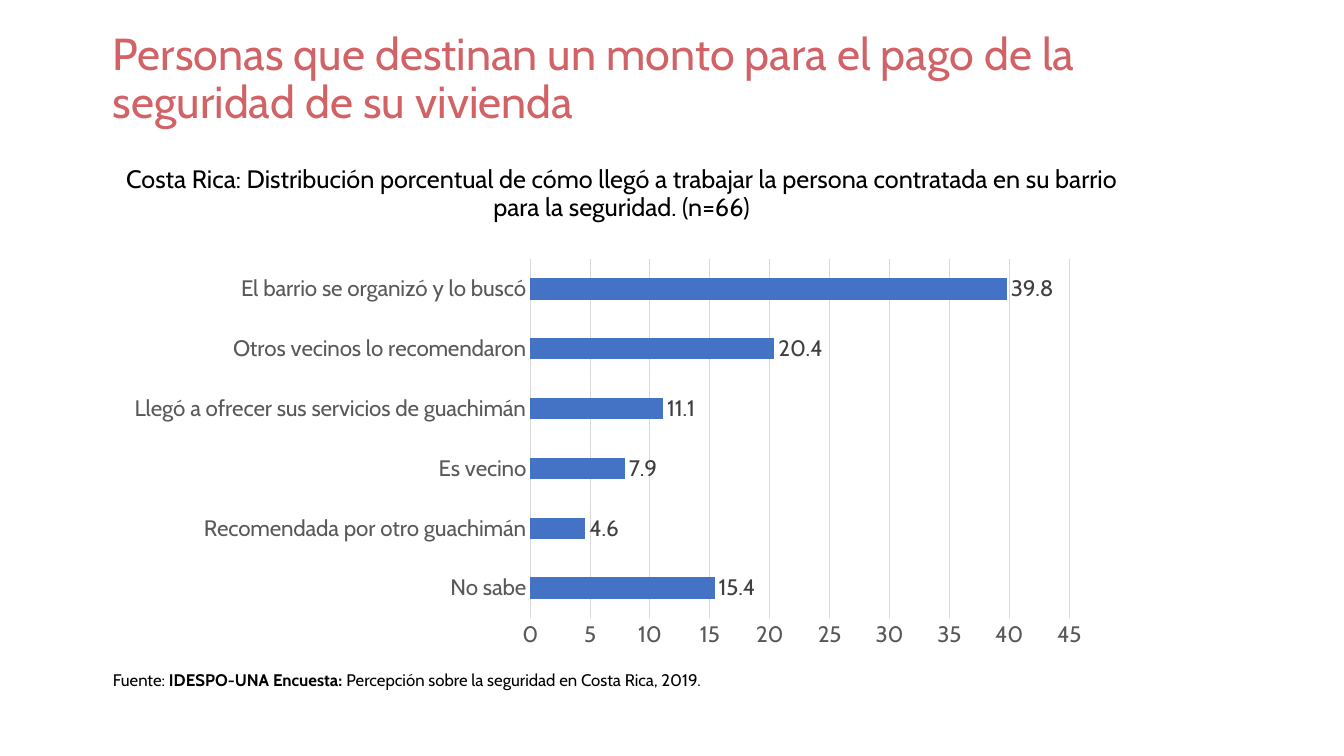
from pptx import Presentation
from pptx.chart.data import CategoryChartData
from pptx.dml.color import RGBColor
from pptx.enum.chart import XL_CHART_TYPE, XL_LABEL_POSITION, XL_TICK_MARK
from pptx.enum.text import MSO_ANCHOR, MSO_AUTO_SIZE, PP_ALIGN
from pptx.util import Pt

PX = 9144  # 100 px to the inch
FONT = "Cabin"
ROSE = RGBColor(0xD1, 0x62, 0x66)
BLACK = RGBColor(0x00, 0x00, 0x00)
AXIS_GRAY = RGBColor(0x59, 0x59, 0x59)
LABEL_GRAY = RGBColor(0x40, 0x40, 0x40)
GRID_GRAY = RGBColor(0xD9, 0xD9, 0xD9)
BLUE = RGBColor(0x44, 0x72, 0xC4)


def set_font(font, size, color, bold=False):
    for name, value in {"name": FONT, "size": Pt(size), "bold": bold}.items():
        setattr(font, name, value)
    font.color.rgb = color


def write_text(box, place, spans, size, color, align, spacing, anchor):
    """Place a box and fill it with one paragraph of (text, bold) spans."""
    for side, length in zip(("left", "top", "width", "height"), place):
        setattr(box, side, length * PX)
    frame = box.text_frame
    frame.word_wrap = True
    frame.auto_size = MSO_AUTO_SIZE.NONE
    frame.vertical_anchor = anchor
    para = frame.paragraphs[0]
    para.alignment = align
    para.line_spacing = spacing
    para.space_before = Pt(0)
    for text, bold in spans:
        span = para.add_run()
        span.text = text
        set_font(span.font, size, color, bold)


deck = Presentation()
deck.slide_width = 1333 * PX
deck.slide_height = 750 * PX
page = deck.slides.add_slide(deck.slide_layouts[5])

write_text(
    page.shapes.title, (102, 7, 1017, 145),
    [("Personas que destinan un monto para el pago de la seguridad de su vivienda", False)],
    32, ROSE, PP_ALIGN.LEFT, 0.9, MSO_ANCHOR.MIDDLE)

subtitle = page.shapes.add_textbox(0, 0, 0, 0)
write_text(
    subtitle, (114, 161, 1005, 80),
    [("Costa Rica: Distribución porcentual de cómo llegó a trabajar la persona "
      "contratada en su barrio para la seguridad. (n=66)", False)],
    18, BLACK, PP_ALIGN.CENTER, 0.9, MSO_ANCHOR.TOP)

source_note = page.shapes.add_textbox(0, 0, 0, 0)
write_text(
    source_note, (102, 660, 642, 30),
    [("Fuente: ", False), ("IDESPO-UNA Encuesta: ", True),
     ("Percepción sobre la seguridad en Costa Rica, 2019.", False)],
    12, BLACK, PP_ALIGN.LEFT, 1.0, MSO_ANCHOR.TOP)

# Bars are listed from the bottom up
answers = {
    "No sabe": 15.4,
    "Recomendada por otro guachimán": 4.6,
    "Es vecino": 7.9,
    "Llegó a ofrecer sus servicios de guachimán": 11.1,
    "Otros vecinos lo recomendaron": 20.4,
    "El barrio se organizó y lo buscó": 39.8,
}
data = CategoryChartData()
data.categories = list(answers)
data.add_series("Series 1", list(answers.values()))
chart = page.shapes.add_chart(
    XL_CHART_TYPE.BAR_CLUSTERED, 114 * PX, 249 * PX, 978 * PX, 402 * PX, data).chart
chart.has_legend = False
chart.has_title = False
set_font(chart.font, 16, BLACK)

for axis in (chart.category_axis, chart.value_axis):
    axis.major_tick_mark = XL_TICK_MARK.NONE
    axis.minor_tick_mark = XL_TICK_MARK.NONE
    set_font(axis.tick_labels.font, 16, AXIS_GRAY)

chart.value_axis.minimum_scale = 0
chart.value_axis.maximum_scale = 45
chart.value_axis.major_unit = 5
chart.value_axis.format.line.fill.background()
chart.value_axis.has_major_gridlines = True
for line in (chart.category_axis.format.line, chart.value_axis.major_gridlines.format.line):
    line.color.rgb = GRID_GRAY
    line.width = Pt(0.75)

plot = chart.plots[0]
plot.gap_width = 182
plot.vary_by_categories = False
bars = plot.series[0]
bars.format.fill.solid()
bars.format.fill.fore_color.rgb = BLUE
labels = bars.data_labels
labels.show_value = True
labels.position = XL_LABEL_POSITION.OUTSIDE_END
set_font(labels.font, 16, LABEL_GRAY)

deck.save("out.pptx")
